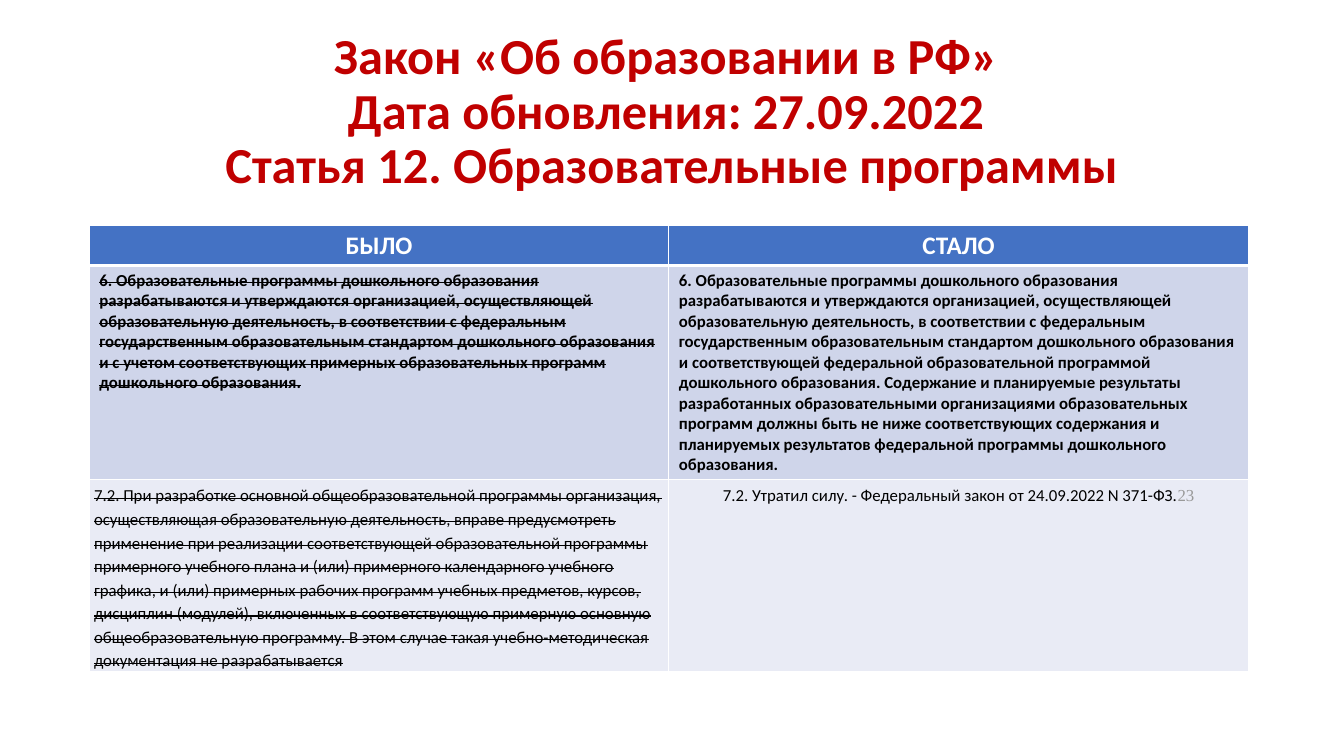
from pptx import Presentation
from pptx.dml.color import RGBColor
from pptx.enum.text import MSO_ANCHOR, PP_ALIGN
from pptx.oxml import parse_xml
from pptx.oxml.ns import nsdecls
from pptx.util import Cm, Pt

RED = RGBColor(0xC0, 0x00, 0x00)
BLUE = RGBColor(0x44, 0x72, 0xC4)
BAND_DARK = RGBColor(0xCF, 0xD5, 0xEA)
BAND_LIGHT = RGBColor(0xE9, 0xEB, 0xF5)
WHITE = RGBColor(0xFF, 0xFF, 0xFF)
BLACK = RGBColor(0x00, 0x00, 0x00)
GRAY = RGBColor(0x99, 0x99, 0x99)


def add_text(para, text, size=12, color=BLACK, bold=False, strike=False, font="Calibri"):
    for index, line in enumerate(text.split("\n")):
        if index:
            para.add_line_break()
        span = para.add_run()
        span.text = line
        span.font.name = font
        span.font.size = Pt(size)
        span.font.bold = bold
        span.font.color.rgb = color
        if strike:
            span.font._element.set("strike", "sngStrike")


def add_borders(cell, bottom_width):
    widths = {"lnL": 1, "lnR": 1, "lnT": 1, "lnB": bottom_width}
    for side, width in widths.items():
        cell._tc.get_or_add_tcPr().append(parse_xml(
            f'<a:{side} {nsdecls("a")} w="{Pt(width)}"><a:solidFill>'
            f'<a:srgbClr val="{WHITE}"/></a:solidFill></a:{side}>'))


deck = Presentation()
deck.slide_width = Cm(33.87)
deck.slide_height = Cm(19.05)
page = deck.slides.add_slide(deck.slide_layouts[6])

# Title
box = page.shapes.add_textbox(Cm(2.33), Cm(1.01), Cm(29.21), Cm(3.68))
box.text_frame.word_wrap = True
box.text_frame.vertical_anchor = MSO_ANCHOR.MIDDLE
para = box.text_frame.paragraphs[0]
para.alignment = PP_ALIGN.CENTER
para.line_spacing = 0.9
add_text(
    para,
    "Закон «Об образовании в РФ» \nДата обновления: 27.09.2022 \n"
    "Статья 12. Образовательные программы",
    size=36, color=RED, bold=True)

# Wording of the law before and after the update
shared_start = (
    "6. Образовательные программы дошкольного образования разрабатываются и утверждаются "
    "организацией, осуществляющей образовательную деятельность, в соответствии с федеральным "
    "государственным образовательным стандартом дошкольного образования и ")
rows = [
    ("БЫЛО", "СТАЛО"),
    (
        shared_start + "с учетом соответствующих примерных образовательных программ "
        "дошкольного образования.",
        shared_start + "соответствующей федеральной образовательной программой дошкольного "
        "образования. Содержание и планируемые результаты разработанных образовательными "
        "организациями образовательных программ должны быть не ниже соответствующих "
        "содержания и планируемых результатов федеральной программы дошкольного образования.",
    ),
    (
        "7.2. При разработке основной общеобразовательной программы организация, "
        "осуществляющая образовательную деятельность, вправе предусмотреть применение при "
        "реализации соответствующей образовательной программы примерного учебного плана и "
        "(или) примерного календарного учебного графика, и (или) примерных рабочих программ "
        "учебных предметов, курсов, дисциплин (модулей), включенных в соответствующую "
        "примерную основную общеобразовательную программу. В этом случае такая "
        "учебно-методическая документация не разрабатывается",
        "7.2. Утратил силу. - Федеральный закон от 24.09.2022 N 371-ФЗ.",
    ),
]
row_heights = [1.02, 5.4, 4.8]
row_fills = [BLUE, BAND_DARK, BAND_LIGHT]

# Comparison table
table = page.shapes.add_table(
    3, 2, Cm(2.25), Cm(5.67), Cm(29.21), Cm(sum(row_heights))).table
for row_index, texts in enumerate(rows):
    is_header = row_index == 0
    is_last = row_index == 2
    table.rows[row_index].height = Cm(row_heights[row_index])
    for column_index, text in enumerate(texts):
        cell = table.cell(row_index, column_index)
        add_borders(cell, bottom_width=3 if is_header else 1)
        cell.fill.solid()
        cell.fill.fore_color.rgb = row_fills[row_index]
        para = cell.text_frame.paragraphs[0]
        if is_header or (is_last and column_index == 1):
            para.alignment = PP_ALIGN.CENTER
        if is_last:
            para.line_spacing = 1.15
            cell.margin_left = cell.margin_right = Cm([0.12, 0.02][column_index])
            cell.margin_top = cell.margin_bottom = Cm(0.08)
        add_text(
            para, text,
            size=18 if is_header else 12,
            color=WHITE if is_header else BLACK,
            bold=not is_last,
            strike=not is_header and column_index == 0)

# Footnote number after the last entry
add_text(table.cell(2, 1).text_frame.paragraphs[0], "23", color=GRAY, font="Times New Roman")

deck.save("out.pptx")
